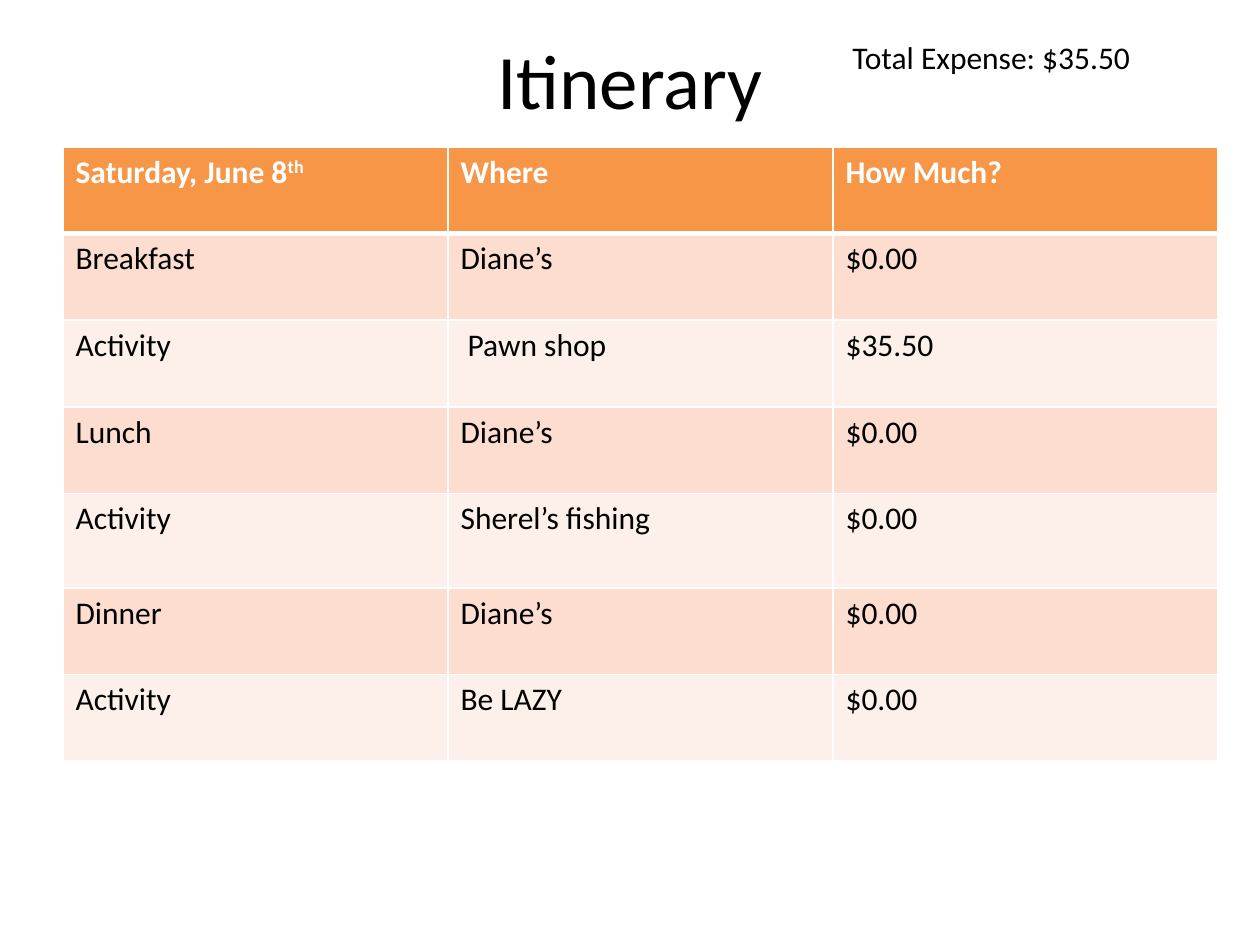
from lxml import etree
from pptx import Presentation
from pptx.dml.color import RGBColor
from pptx.enum.text import MSO_ANCHOR, PP_ALIGN
from pptx.oxml.ns import qn
from pptx.util import Pt

CENTER, LEFT = PP_ALIGN.CENTER, PP_ALIGN.LEFT
MIDDLE, TOP = MSO_ANCHOR.MIDDLE, MSO_ANCHOR.TOP
FONT = "Calibri"
COLORS = {
    "text": "000000",
    "header_text": "FFFFFF",
    "header": "F79646",
    "odd_row": "FCDDCF",
    "even_row": "FDEFE9",
    "border": "FFFFFF",
}

HEADINGS = ("Saturday, June 8", "Where", "How Much?")
PLANS = [
    ("Breakfast", "Diane’s", "$0.00"),
    ("Activity", " Pawn shop", "$35.50"),
    ("Lunch", "Diane’s", "$0.00"),
    ("Activity", "Sherel’s fishing", "$0.00"),
    ("Dinner", "Diane’s", "$0.00"),
    ("Activity", "Be LAZY", "$0.00"),
]
ROW_HEIGHT, FISHING_HEIGHT = 49.5, 54
FISHING_ROW = 4


def format_runs(paragraph, size, color, bold=False):
    for run in paragraph.runs:
        run.font.name = FONT
        run.font.size = Pt(size)
        run.font.bold = bold
        run.font.color.rgb = RGBColor.from_string(COLORS[color])


def add_label(slide, box, text, size, align=LEFT, anchor=TOP):
    label = slide.shapes.add_textbox(*map(Pt, box))
    frame = label.text_frame
    frame.word_wrap = True
    frame.vertical_anchor = anchor
    frame.text = text
    frame.paragraphs[0].alignment = align
    format_runs(frame.paragraphs[0], size, "text")


def set_borders(cell, top, bottom):
    """Draw the four cell edges; widths are in points."""
    properties = cell._tc.get_or_add_tcPr()
    edges = (("a:lnL", 1), ("a:lnR", 1), ("a:lnT", top), ("a:lnB", bottom))
    for tag, width in edges:
        line = etree.SubElement(properties, qn(tag), w=str(Pt(width)))
        fill = etree.SubElement(line, qn("a:solidFill"))
        etree.SubElement(fill, qn("a:srgbClr"), val=COLORS["border"])


def add_itinerary(slide, box):
    rows = [HEADINGS, *PLANS]
    table = slide.shapes.add_table(len(rows), len(HEADINGS), *map(Pt, box)).table
    for column in table.columns:
        column.width = Pt(box[2] / len(HEADINGS))

    for r, values in enumerate(rows):
        is_header = r == 0
        table.rows[r].height = Pt(FISHING_HEIGHT if r == FISHING_ROW else ROW_HEIGHT)
        fill = "header" if is_header else "odd_row" if r % 2 else "even_row"
        for c, value in enumerate(values):
            cell = table.cell(r, c)
            cell.text = value
            paragraph = cell.text_frame.paragraphs[0]
            # Raised ordinal after the date
            if is_header and c == 0:
                ordinal = paragraph.add_run()
                ordinal.text = "th"
                ordinal._r.get_or_add_rPr().set("baseline", "30000")
            format_runs(paragraph, 18, "header_text" if is_header else "text", is_header)
            # Borders come before the fill in the cell properties
            set_borders(cell, top=3 if r == 1 else 1, bottom=3 if is_header else 1)
            cell.fill.solid()
            cell.fill.fore_color.rgb = RGBColor.from_string(COLORS[fill])


def main():
    deck = Presentation()
    deck.slide_width, deck.slide_height = Pt(720), Pt(540)
    slide = deck.slides.add_slide(deck.slide_layouts[6])

    # Title and total
    add_label(slide, (36, 0, 648, 90), "Itinerary", 44, CENTER, MIDDLE)
    add_label(slide, (480, 18, 222, 29), "Total Expense: $35.50", 18)

    # Day plan
    plan_height = ROW_HEIGHT * len(PLANS) + FISHING_HEIGHT
    add_itinerary(slide, (36, 84, 660, plan_height))

    deck.save("out.pptx")


if __name__ == "__main__":
    main()
